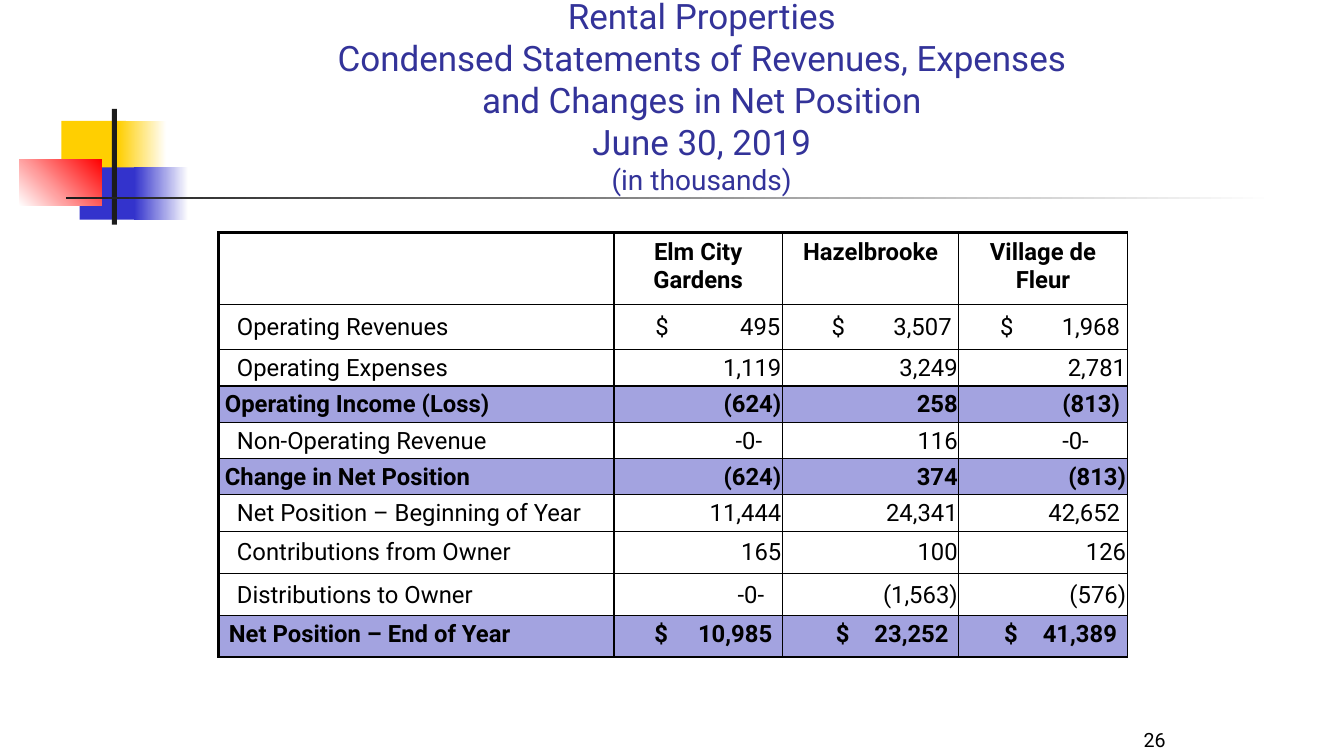
from dataclasses import dataclass

from lxml import etree
from pptx import Presentation
from pptx.dml.color import RGBColor as RGB
from pptx.enum.shapes import MSO_SHAPE as SHAPE
from pptx.enum.text import MSO_ANCHOR as ANCHOR, PP_ALIGN as ALIGN
from pptx.oxml.ns import qn
from pptx.util import Inches, Pt


@dataclass(frozen=True)
class Theme:
    font: str = "Roboto"
    title: str = "333399"
    text: str = "000000"
    white: str = "FFFFFF"
    band: str = "A3A3E0"
    yellow: str = "FFCF01"
    blue: str = "3333CC"
    red: str = "FF0000"
    dark: str = "1C1C1C"
    title_size: float = 25
    unit_size: float = 20
    table_size: float = 17
    number_size: float = 14
    thin: float = 1
    thick: float = 2.25


T = Theme()

TITLE_LINES = ["Rental Properties",
               "Condensed Statements of Revenues, Expenses",
               "and Changes in Net Position",
               "June 30, 2019"]
HEADERS = ["Elm City Gardens", "Hazelbrooke", "Village de Fleur"]
COLS = [3.92, 1.67, 1.75, 1.67]
FLUSH, NEAR, PADDED = 0.01, 0.07, 0.1

# Label, row height, kind, then (amount, right inset) for each property
ROWS = [
    ("Operating Revenues", 0.45, "line",
     [("$\t495", 0.02), ("$\t3,507", NEAR), ("$\t1,968", NEAR)]),
    ("Operating Expenses", 0.36, "line",
     [("1,119", FLUSH), ("3,249", FLUSH), ("2,781", FLUSH)]),
    ("Operating Income (Loss)", 0.36, "subtotal",
     [("(624)", FLUSH), ("258", FLUSH), ("(813)", NEAR)]),
    ("Non-Operating Revenue", 0.36, "line",
     [("-0-", 0.2), ("116", FLUSH), ("-0-", 0.38)]),
    ("Change in Net Position", 0.36, "subtotal",
     [("(624)", FLUSH), ("374", FLUSH), ("(813)", FLUSH)]),
    ("Net Position – Beginning of Year", 0.36, "line",
     [("11,444", FLUSH), ("24,341", FLUSH), ("42,652", NEAR)]),
    ("Contributions from Owner", 0.42, "line",
     [("165", FLUSH), ("100", FLUSH), ("126", FLUSH)]),
    ("Distributions to Owner", 0.42, "line",
     [("-0-", 0.18), ("(1,563)", FLUSH), ("(576)", FLUSH)]),
    ("Net Position – End of Year", 0.41, "total",
     [("$\t10,985", PADDED), ("$\t23,252", PADDED), ("$\t41,389", PADDED)]),
]
LABEL_INSET = {"line": 0.18, "subtotal": 0.06, "total": 0.1}
DOLLAR_INSET = {"line": [0.41, 0.49, 0.41], "total": [0.4, 0.53, 0.45]}


def add_text(p, text, size, color=T.text, bold=False, align=None):
    if align is not None:
        p.alignment = align
    r = p.add_run()
    r.text = text
    r.font.name, r.font.size, r.font.bold = T.font, Pt(size), bold
    r.font.color.rgb = RGB.from_string(color)
    return r


def set_margins(obj, left, top, right, bottom):
    obj.margin_left, obj.margin_top = Inches(left), Inches(top)
    obj.margin_right, obj.margin_bottom = Inches(right), Inches(bottom)


def add_block(s, box, start, end=None, angle=0):
    """Borderless rectangle, solid or fading from start to end."""
    sp = s.shapes.add_shape(SHAPE.RECTANGLE, *map(Inches, box))
    sp.shadow.inherit = False
    sp.line.fill.background()
    if end is None:
        sp.fill.solid()
        sp.fill.fore_color.rgb = RGB.from_string(start)
        return
    sp.fill.gradient()
    sp.fill.gradient_angle = angle
    for stop, color, pos in zip(sp.fill.gradient_stops, (start, end), (0, 1)):
        stop.color.rgb, stop.position = RGB.from_string(color), pos


def add_ornament(s, x, y):
    """Coloured squares with the crossing bars."""
    add_block(s, (x + 0.42, y + 0.12, 0.64, 0.52), T.yellow)
    add_block(s, (x + 0.98, y + 0.12, 0.48, 0.52), T.yellow, T.white)
    add_block(s, (x + 0.6, y + 0.58, 0.61, 0.52), T.blue)
    add_block(s, (x + 1.14, y + 0.58, 0.54, 0.52), T.blue, T.white)
    add_block(s, (x, y + 0.5, 0.82, 0.46), T.white, T.red, angle=45)
    add_block(s, (x + 0.92, y, 0.05, 1.15), T.dark)
    add_block(s, (x + 0.46, y + 0.87, 11.99, 0.03), T.dark, T.white)


def add_title(s, x, y, w, h):
    sp = s.shapes.title
    sp.left, sp.top, sp.width, sp.height = map(Inches, (x, y, w, h))
    tf = sp.text_frame
    tf.word_wrap, tf.vertical_anchor = True, ANCHOR.BOTTOM
    set_margins(tf, 0.1, 0.05, 0.1, 0.05)
    p = tf.paragraphs[0]
    p.line_spacing = 1.0
    for line in TITLE_LINES:
        add_text(p, line, T.title_size, T.title, align=ALIGN.CENTER)
        p.add_line_break()
    add_text(p, "(in thousands)", T.unit_size, T.title)


def set_borders(cell, **widths):
    tcPr = cell._tc.get_or_add_tcPr()
    for i, side in enumerate("LRTB"):
        width = widths.get(side, T.thin)
        ln = etree.Element(qn(f"a:ln{side}"), w=str(Pt(width)))
        fill = etree.SubElement(ln, qn("a:solidFill"))
        etree.SubElement(fill, qn("a:srgbClr"), val=T.text)
        tcPr.insert(i, ln)


def add_right_tab(p, pos):
    tabs = etree.SubElement(p._p.get_or_add_pPr(), qn("a:tabLst"))
    etree.SubElement(tabs, qn("a:tab"), pos=str(Inches(pos)), algn="r")


def fill_row(cells, label, kind, amounts):
    """Label on the left, then one amount for each property."""
    bold = kind != "line"
    anchor = ANCHOR.TOP if kind == "total" else ANCHOR.MIDDLE
    top, bottom = (0.05, 0.05) if kind == "total" else (0.01, 0)
    for cell in cells:
        cell.vertical_anchor = anchor
    set_margins(cells[0], LABEL_INSET[kind], top, 0.01, bottom)
    add_text(cells[0].text_frame.paragraphs[0], label, T.table_size, bold=bold)
    for i, (amount, right) in enumerate(amounts):
        cell = cells[i + 1]
        p = cell.text_frame.paragraphs[0]
        if "\t" in amount:
            left = DOLLAR_INSET[kind][i]
            set_margins(cell, left, top, 0, bottom)
            add_text(p, amount, T.table_size, bold=bold, align=ALIGN.LEFT)
            add_right_tab(p, COLS[i + 1] - left - right)
        else:
            set_margins(cell, 0.01, top, right, bottom)
            add_text(p, amount, T.table_size, bold=bold, align=ALIGN.RIGHT)


def add_statement(s, x, y, w, h):
    last = len(ROWS)
    tbl = s.shapes.add_table(last + 1, len(COLS), *map(Inches, (x, y, w, h))).table
    tbl.first_row = tbl.horz_banding = False
    for col, width in zip(tbl.columns, COLS):
        col.width = Inches(width)
    heights = [0.71] + [row[1] for row in ROWS]
    for row, height in zip(tbl.rows, heights):
        row.height = Inches(height)

    # Fills and borders
    for i, row in enumerate(tbl.rows):
        shaded = i > 0 and ROWS[i - 1][2] != "line"
        for j, cell in enumerate(row.cells):
            cell.fill.solid()
            cell.fill.fore_color.rgb = RGB.from_string(T.band if shaded else T.white)
            set_borders(cell, L=T.thin if j else T.thick,
                        T=T.thin if i else T.thick,
                        B=T.thick if i == last else T.thin)

    # Wording and amounts
    for j, name in enumerate(HEADERS, 1):
        add_text(tbl.cell(0, j).text_frame.paragraphs[0], name, T.table_size,
                 bold=True, align=ALIGN.CENTER)
    for i, (label, _, kind, amounts) in enumerate(ROWS, 1):
        fill_row(list(tbl.rows[i].cells), label, kind, amounts)


def add_page_number(s, x, y, w, h):
    tf = s.shapes.add_textbox(*map(Inches, (x, y, w, h))).text_frame
    tf.word_wrap, tf.vertical_anchor = True, ANCHOR.BOTTOM
    add_text(tf.paragraphs[0], "26", T.number_size, align=ALIGN.RIGHT)


def main():
    prs = Presentation()
    prs.slide_width, prs.slide_height = Inches(13.33), Inches(7.5)
    s = prs.slides.add_slide(prs.slide_layouts[5])
    add_ornament(s, 0.19, 1.08)
    add_title(s, 2.42, 0, 9.08, 2)
    add_statement(s, 2.17, 2.31, 9, 4.19)
    add_page_number(s, 9.58, 7, 2.08, 0.5)
    prs.save("out.pptx")


if __name__ == "__main__":
    main()
